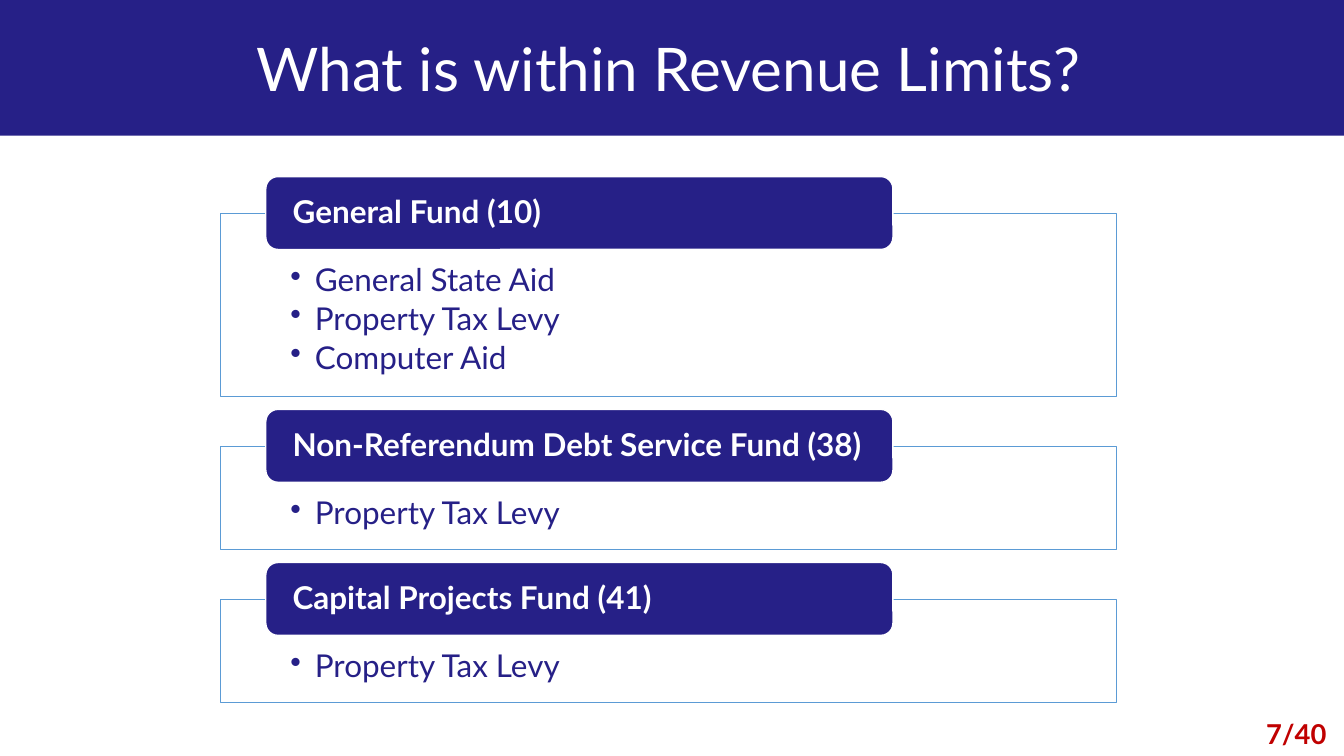
from lxml.etree import SubElement
from pptx import Presentation
from pptx.dml.color import RGBColor
from pptx.enum.shapes import MSO_SHAPE
from pptx.enum.text import MSO_ANCHOR, PP_ALIGN
from pptx.oxml.ns import qn
from pptx.util import Pt

FUNDS = [
    ("General Fund (10)", ["General State Aid", "Property Tax Levy", "Computer Aid"], 133.9),
    ("Non-Referendum Debt Service Fund (38)", ["Property Tax Levy"], 75.6),
    ("Capital Projects Fund (41)", ["Property Tax Levy"], 75.6),
]


def color(code):
    """Turn a hex string into a colour."""
    return RGBColor.from_string(code)


class Deck:
    """Hold the style and the current slide."""

    navy, white, blue, red = "262087", "FFFFFF", "5B9BD5", "C00000"
    face = "Lato"

    def __init__(self, wide, high):
        """Start a deck with one title-only slide."""
        self.prs = Presentation()
        self.prs.slide_width, self.prs.slide_height = Pt(wide), Pt(high)
        self.slide = self.prs.slides.add_slide(self.prs.slide_layouts[5])

    def shape(self, kind, spot, fill, line=None):
        """Draw a flat preset shape."""
        shape = self.slide.shapes.add_shape(kind, *map(Pt, spot))
        shape.shadow.inherit = False
        shape.fill.solid()
        shape.fill.fore_color.rgb = color(fill)
        if line:
            shape.line.color.rgb = color(line)
            shape.line.width = Pt(1)
        else:
            shape.line.fill.background()
        return shape

    def frame(self, shape, sides, top=0, base=0, anchor=MSO_ANCHOR.MIDDLE):
        """Set the insets and anchor of a text frame."""
        frame = shape.text_frame
        frame.word_wrap = True
        frame.vertical_anchor = anchor
        frame.margin_left = frame.margin_right = Pt(sides)
        frame.margin_top, frame.margin_bottom = Pt(top), Pt(base)
        return frame

    def put(self, para, text, size, tint, bold=False, align=PP_ALIGN.LEFT):
        """Fill a paragraph and set its font."""
        para.text = text
        para.alignment = align
        font = para.font
        font.name, font.size, font.bold = self.face, Pt(size), bold
        font.color.rgb = color(tint)

    def title(self, text, spot, band):
        """Place the title over a full-width band."""
        bar = self.shape(MSO_SHAPE.RECTANGLE, band, self.navy)
        title = self.slide.shapes.title
        title.element.addprevious(bar.element)
        title.left, title.top, title.width, title.height = map(Pt, spot)
        para = self.frame(title, 7.2, 3.6, 3.6).paragraphs[0]
        self.put(para, text, 44, self.white, align=PP_ALIGN.CENTER)
        para.space_after = Pt(6)

    def panel(self, items, spot):
        """Draw an outlined panel with a bullet list."""
        box = self.shape(MSO_SHAPE.RECTANGLE, spot, self.white, self.blue)
        tone = box.element.spPr.find(qn("a:solidFill"))[0]
        SubElement(tone, qn("a:alpha"), val="90000")
        frame = self.frame(box, 51, 37.4, 13, MSO_ANCHOR.TOP)
        for n, item in enumerate(items):
            para = frame.add_paragraph() if n else frame.paragraphs[0]
            para.level = 1
            props = para._p.get_or_add_pPr()
            props.set("marL", str(Pt(18)))
            props.set("indent", str(Pt(-18)))
            SubElement(props, qn("a:buChar"), char="•")
            self.put(para, item, 23, self.navy)
            para.line_spacing = 0.9
            para.space_after = Pt(3.5)

    def label(self, text, spot):
        """Draw a rounded heading."""
        pill = self.shape(MSO_SHAPE.ROUNDED_RECTANGLE, spot, self.navy, self.white)
        para = self.frame(pill, 17).paragraphs[0]
        self.put(para, text, 23, self.white, True)
        para.line_spacing = 0.9

    def page(self, text, spot):
        """Add the page count."""
        box = self.slide.shapes.add_textbox(*map(Pt, spot))
        para = self.frame(box, 7.2, 3.6, 3.6, MSO_ANCHOR.TOP).paragraphs[0]
        self.put(para, text, 20, self.red, True, PP_ALIGN.CENTER)


def main():
    """Build the slide."""
    deck = Deck(982.8, 553)
    deck.title("What is within Revenue Limits?", (0, 0, 978, 98), (-0.5, 0, 983.5, 99.2))
    top = 156.2
    for name, items, high in FUNDS:
        deck.panel(items, (161.3, top, 655.2, high))
        deck.label(name, (194.4, top - 27, 458.6, 53.3))
        top += high + 36.4
    deck.page("7/40", (913, 521.3, 69.8, 31.7))
    deck.prs.save("out.pptx")


if __name__ == "__main__":
    main()
